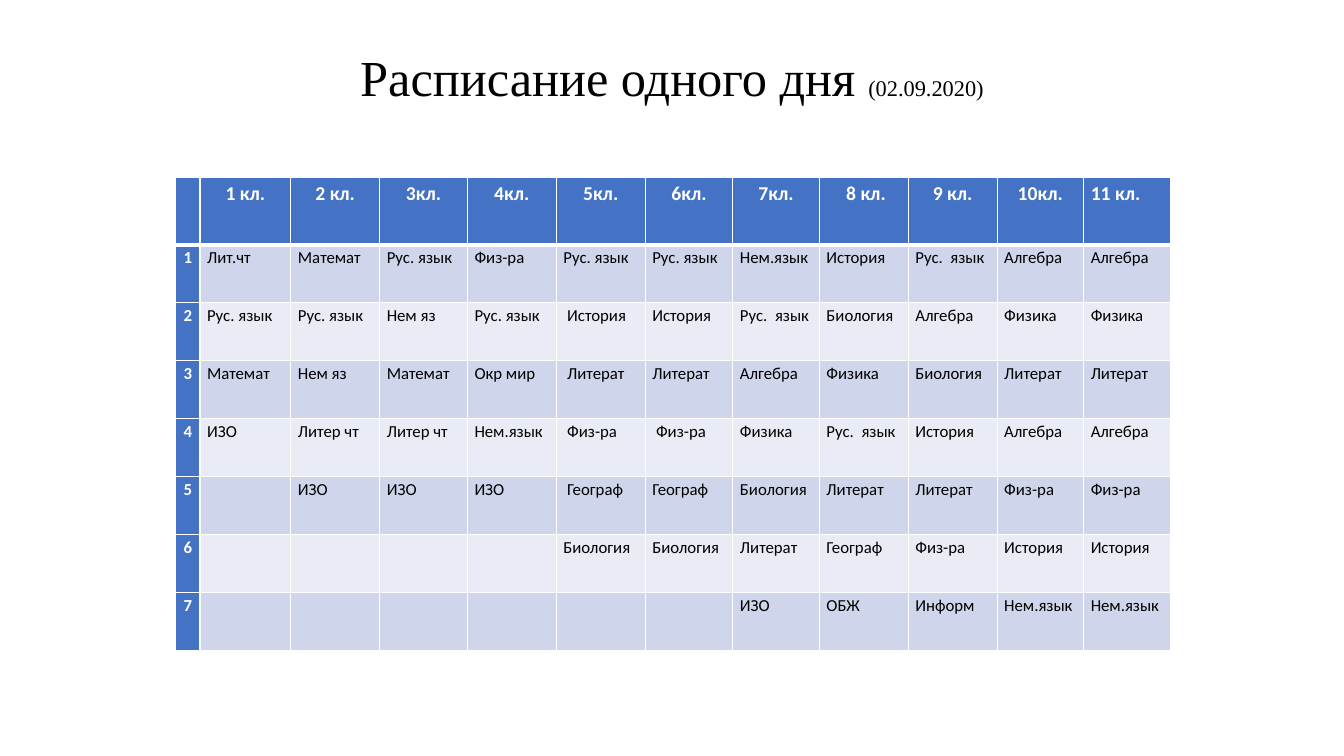
import pptx
import pptx.dml.color
import pptx.enum.text
import pptx.oxml.ns
import pptx.util
from lxml import etree

Cm = pptx.util.Cm
Pt = pptx.util.Pt
ALIGN = pptx.enum.text.PP_ALIGN
ANCHOR = pptx.enum.text.MSO_ANCHOR

COLUMN_WIDTHS = [0.6, 2.29, 2.24, 2.21, 2.24, 2.24, 2.21, 2.18, 2.24, 2.24, 2.18, 2.18]
HEADER_HEIGHT = 1.69
LESSON_HEIGHT = 1.46

CLASSES = ["", "1 кл.", "2 кл.", "3кл.", "4кл.", "5кл.", "6кл.", "7кл.",
           " 8 кл.", "9 кл.", "10кл.", "11 кл."]
LESSONS = [
    ["Лит.чт", "Математ", "Рус. язык", "Физ-ра", "Рус. язык", "Рус. язык",
     "Нем.язык", "История", "Рус.  язык", "Алгебра", "Алгебра"],
    ["Рус. язык", "Рус. язык", "Нем яз", "Рус. язык", " История", "История",
     "Рус.  язык", "Биология", "Алгебра", "Физика", "Физика"],
    ["Математ", "Нем яз", "Математ", "Окр мир", " Литерат", "Литерат",
     "Алгебра", "Физика", "Биология", "Литерат", "Литерат"],
    ["ИЗО", "Литер чт", "Литер чт", "Нем.язык", " Физ-ра", " Физ-ра",
     "Физика", "Рус.  язык", "История", "Алгебра", "Алгебра"],
    ["", "ИЗО", "ИЗО", "ИЗО", " Географ", "Географ",
     "Биология", "Литерат", "Литерат", "Физ-ра", "Физ-ра"],
    ["", "", "", "", "Биология", "Биология",
     "Литерат", "Географ", "Физ-ра", "История", "История"],
    ["", "", "", "", "", "",
     "ИЗО", "ОБЖ", "Информ", "Нем.язык", "Нем.язык"],
]


def color(value):
    return pptx.dml.color.RGBColor.from_string(value)


class TimetablePage:
    """Holds the style and the slide being filled."""
    title_font = "Times New Roman"
    table_font = "Calibri"
    accent, white, black = "4472C4", "FFFFFF", "000000"
    bands = ["CFD5EA", "E9EBF5"]

    def __init__(self, page):
        self.page = page

    def style(self, span, font, size, shade, bold=False):
        span.font.name = font
        span.font.size = Pt(size)
        span.font.color.rgb = color(shade)
        span.font.bold = bold

    def title(self, spans, left, top, width, height):
        box = self.page.shapes.add_textbox(Cm(left), Cm(top), Cm(width), Cm(height))
        frame = box.text_frame
        frame.word_wrap = True
        frame.vertical_anchor = ANCHOR.MIDDLE
        para = frame.paragraphs[0]
        para.alignment = ALIGN.CENTER
        para.line_spacing = 0.9
        for text, size in spans:
            span = para.add_run()
            span.text = text
            self.style(span, self.title_font, size, self.black)

    def border(self, cell, side, width):
        properties = cell._tc.get_or_add_tcPr()
        line = etree.SubElement(properties, pptx.oxml.ns.qn("a:ln" + side), w=str(Pt(width)))
        fill = etree.SubElement(line, pptx.oxml.ns.qn("a:solidFill"))
        etree.SubElement(fill, pptx.oxml.ns.qn("a:srgbClr"), val=self.white)

    def cell(self, cell, text, row, column):
        heading = row == 0 or column == 0
        # The line under the header row is thicker
        widths = {"L": 1, "R": 1, "T": 3 if row == 1 else 1, "B": 3 if row == 0 else 1}
        for side, width in widths.items():
            self.border(cell, side, width)
        cell.fill.solid()
        cell.fill.fore_color.rgb = color(self.accent if heading else self.bands[(row - 1) % 2])
        if not text:
            return
        cell.margin_left = cell.margin_right = Cm(0.18)
        cell.margin_top = cell.margin_bottom = 0
        cell.text_frame.text = text
        para = cell.text_frame.paragraphs[0]
        last_class = row == 0 and column == len(COLUMN_WIDTHS) - 1
        para.alignment = ALIGN.CENTER if heading and not last_class else ALIGN.LEFT
        para.line_spacing = 1.15
        para.space_after = Pt(10)
        self.style(para.runs[0], self.table_font, 14 if row == 0 else 12,
                   self.white if heading else self.black, heading)

    def table(self, rows, left, top):
        height = HEADER_HEIGHT + LESSON_HEIGHT * (len(rows) - 1)
        frame = self.page.shapes.add_table(len(rows), len(COLUMN_WIDTHS), Cm(left), Cm(top),
                                           Cm(sum(COLUMN_WIDTHS)), Cm(height))
        table = frame.table
        for column, width in zip(table.columns, COLUMN_WIDTHS):
            column.width = Cm(width)
        for row, texts in enumerate(rows):
            table.rows[row].height = Cm(LESSON_HEIGHT if row else HEADER_HEIGHT)
            for column, text in enumerate(texts):
                self.cell(table.cell(row, column), text, row, column)


def main():
    deck = pptx.Presentation()
    deck.slide_width = Cm(33.87)
    deck.slide_height = Cm(19.05)
    timetable = TimetablePage(deck.slides.add_slide(deck.slide_layouts[6]))

    # Title with the date
    timetable.title([("Расписание одного дня ", 36), ("(02.09.2020)", 16)],
                    2.33, 1.02, 29.21, 2.01)

    # Lessons by class, numbered down the left side
    numbered = [[str(number)] + lessons for number, lessons in enumerate(LESSONS, 1)]
    timetable.table([CLASSES] + numbered, 4.43, 4.48)

    deck.save("out.pptx")


if __name__ == "__main__":
    main()
